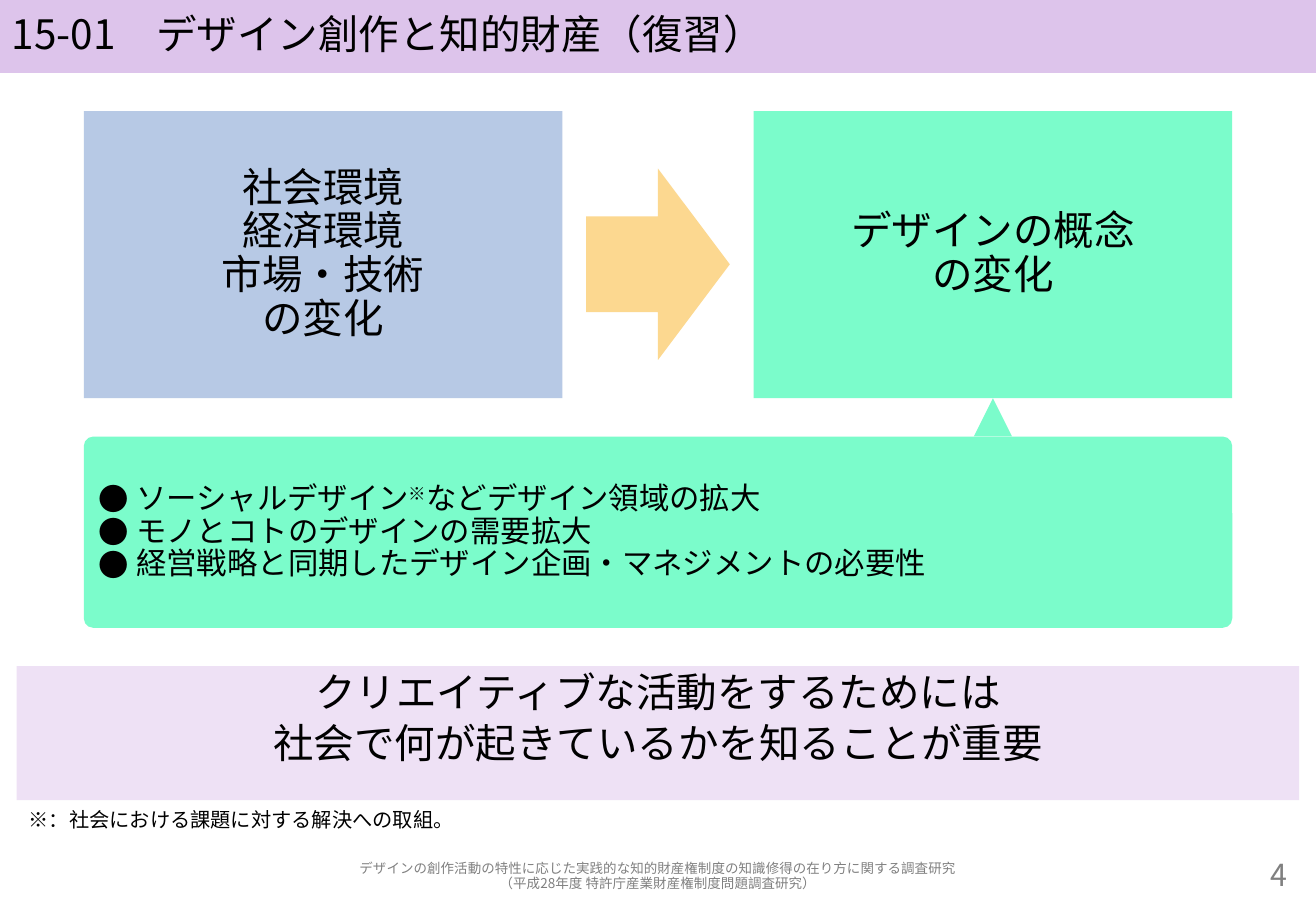
from lxml import etree
from pptx import Presentation
from pptx.dml.color import RGBColor
from pptx.enum.shapes import MSO_SHAPE
from pptx.enum.text import MSO_ANCHOR, PP_ALIGN
from pptx.oxml.ns import qn
from pptx.util import Inches, Pt

RECT, ROUND = MSO_SHAPE.RECTANGLE, MSO_SHAPE.ROUNDED_RECTANGLE
ARROW, TRIANGLE = MSO_SHAPE.RIGHT_ARROW, MSO_SHAPE.ISOSCELES_TRIANGLE
TOP, MIDDLE, BOTTOM = MSO_ANCHOR.TOP, MSO_ANCHOR.MIDDLE, MSO_ANCHOR.BOTTOM
LEFT, CENTER, RIGHT = PP_ALIGN.LEFT, PP_ALIGN.CENTER, PP_ALIGN.RIGHT

# Content: one list item per paragraph
TITLE = ["15-01　デザイン創作と知的財産（復習）"]
CAUSES = ["社会環境", "経済環境", "市場・技術", "の変化"]
EFFECT = ["デザインの概念", "の変化"]
MARK = "※"  # raised wherever it follows a word in the bullets
BULLETS = ["ソーシャルデザイン※などデザイン領域の拡大",
           "モノとコトのデザインの需要拡大",
           "経営戦略と同期したデザイン企画・マネジメントの必要性"]
MESSAGE = ["クリエイティブな活動をするためには",
           "社会で何が起きているかを知ることが重要"]
NOTE = ["※：社会における課題に対する解決への取組。"]
FOOTER = ["デザインの創作活動の特性に応じた実践的な知的財産権制度の知識修得の在り方に関する調査研究",
          "（平成28年度 特許庁産業財産権制度問題調査研究）"]
PAGE = ["4"]

FONT = "Noto Sans CJK JP"
BLACK, GRAY = "000000", "808080"
PURPLE, LILAC, BLUE, GREEN, ORANGE = "DDC4EB", "EEE1F5", "B7C9E5", "7BFCCB", "FCD890"

# Grid: the slide is 55 square units wide
W, H, COLS = 10.83, 7.5, 55
UNIT = W / COLS
MARGIN, EDGE, GAP = 3.5, 0.7, 1.6
BLOCK_W, BLOCK_H, ARROW_W, CARD_H, BAND_H = 20, 12, 6, 8, 5.6
BLOCK_Y = 4.65
EFFECT_X = COLS - MARGIN - BLOCK_W
CARD_Y = BLOCK_Y + BLOCK_H + GAP
BAND_Y = CARD_Y + CARD_H + GAP
NOTE_Y = BAND_Y + BAND_H
FOOTER_Y = NOTE_Y + 2.4
WIDE = COLS - 2 * EDGE

prs = Presentation()
prs.slide_width, prs.slide_height = Inches(W), Inches(H)
s = prs.slides.add_slide(prs.slide_layouts[6])


def rgb(color):
    return RGBColor.from_string(color)


def box(x, y, w, h):
    return [Inches(n * UNIT) for n in (x, y, w, h)]


def add_shape(kind, color, x, y, w, h):
    sp = s.shapes.add_shape(kind, *box(x, y, w, h))
    sp.shadow.inherit = False
    sp.fill.solid()
    sp.fill.fore_color.rgb = rgb(color)
    sp.line.fill.background()
    return sp


def add_run(p, text, size, color, raised=False):
    r = p.add_run()
    r.text = text
    r.font.size, r.font.name = Pt(size), FONT
    r.font.color.rgb = rgb(color)
    rPr = r.font._element
    etree.SubElement(rPr, qn("a:ea")).set("typeface", FONT)
    if raised:
        rPr.set("baseline", "30000")


def add_bullet(p):
    pPr = p._p.get_or_add_pPr()
    indent = Inches(0.31)
    pPr.set("marL", str(indent))
    pPr.set("indent", str(-indent))
    etree.SubElement(pPr, qn("a:buFont")).set("typeface", FONT)
    etree.SubElement(pPr, qn("a:buChar")).set("char", "●")


def write(sp, lines, size=24, color=BLACK, align=CENTER, anchor=MIDDLE,
          before=0, bullets=False):
    tf = sp.text_frame
    tf.word_wrap, tf.vertical_anchor = True, anchor
    for i, line in enumerate(lines):
        p = tf.add_paragraph() if i else tf.paragraphs[0]
        p.alignment, p.line_spacing, p.space_before = align, 0.9, Pt(before)
        if bullets:
            add_bullet(p)
        head, mark, tail = line.partition(MARK) if bullets else (line, "", "")
        for text in (head, mark, tail):
            if text:
                add_run(p, text, size, color, text == MARK)


def add_text(lines, x, y, w, **style):
    write(s.shapes.add_textbox(*box(x, y, w, GAP)), lines, **style)


# Title bar
write(add_shape(RECT, PURPLE, 0, 0, COLS, 3.05), TITLE, align=LEFT)

# Cause, arrow, effect
write(add_shape(RECT, BLUE, MARGIN, BLOCK_Y, BLOCK_W, BLOCK_H), CAUSES)
write(add_shape(RECT, GREEN, EFFECT_X, BLOCK_Y, BLOCK_W, BLOCK_H), EFFECT)
add_shape(ARROW, ORANGE, (COLS - ARROW_W) / 2, BLOCK_Y + 2.4, ARROW_W, 8)

# Card with bullets, pointing up at the effect
card = add_shape(ROUND, GREEN, MARGIN, CARD_Y, COLS - 2 * MARGIN, CARD_H)
card.adjustments[0] = 0.05
write(card, BULLETS, size=18, align=LEFT, bullets=True)
add_shape(TRIANGLE, GREEN, EFFECT_X + (BLOCK_W - GAP) / 2, CARD_Y - GAP, GAP, GAP)

# Message band and its note
write(add_shape(RECT, LILAC, EDGE, BAND_Y, WIDE, BAND_H), MESSAGE,
      anchor=TOP, before=4.8)
add_text(NOTE, EDGE, NOTE_Y, WIDE, size=12, align=LEFT, anchor=BOTTOM)

# Footer and page number
add_text(FOOTER, EDGE, FOOTER_Y, WIDE, size=8, color=GRAY)
add_text(PAGE, COLS - EDGE - 6.8, FOOTER_Y, 6.8, size=18, color=GRAY, align=RIGHT)

prs.save("out.pptx")
